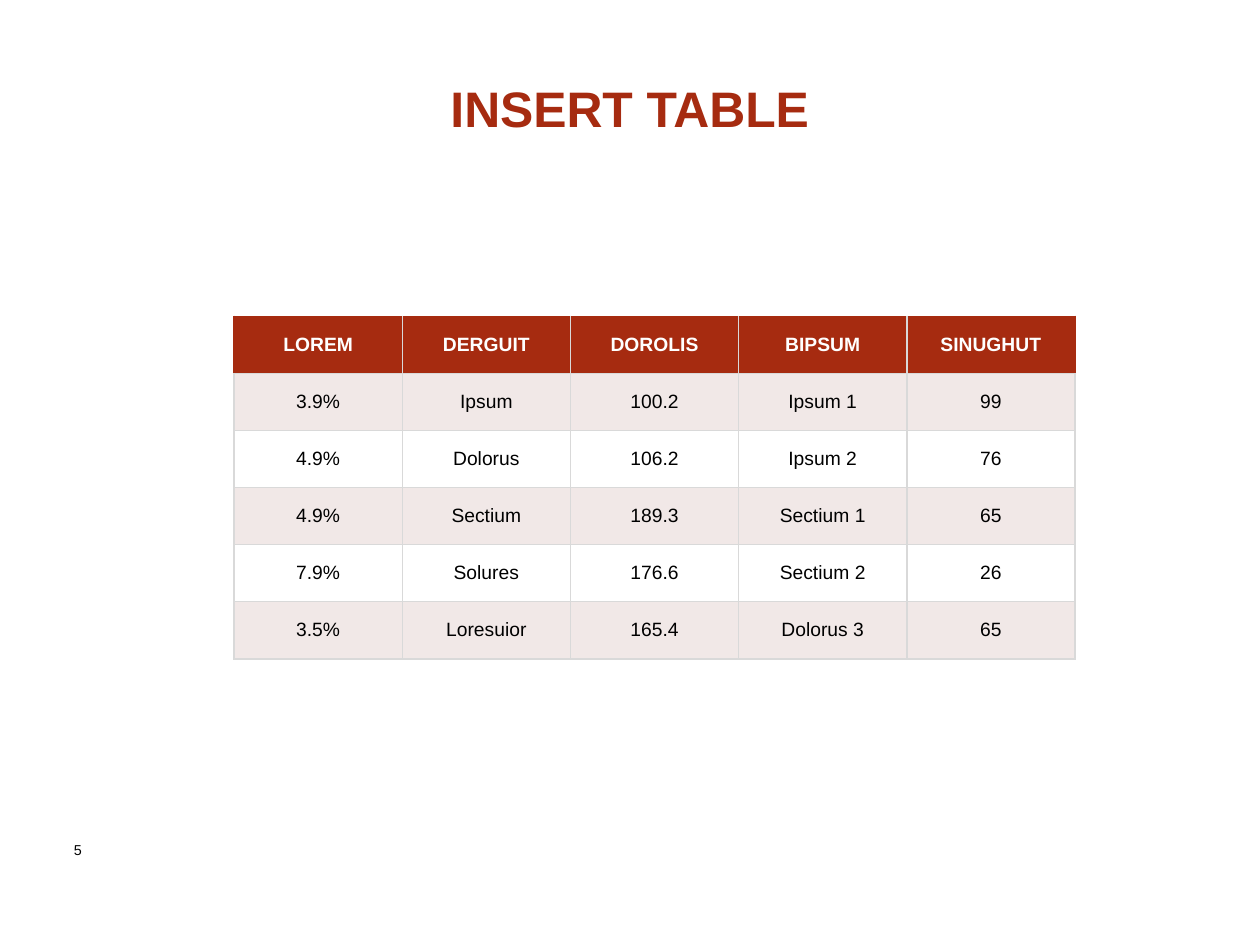
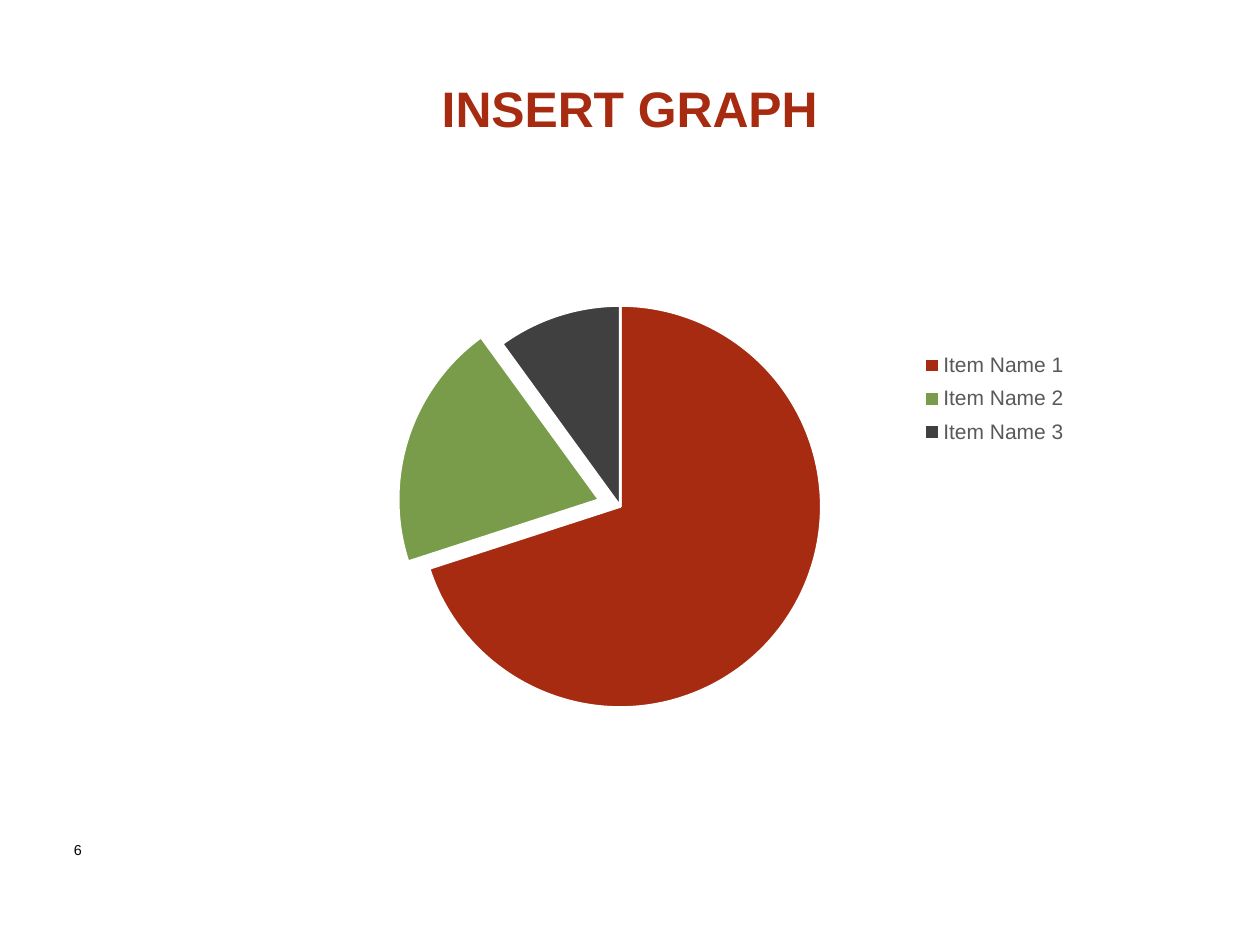
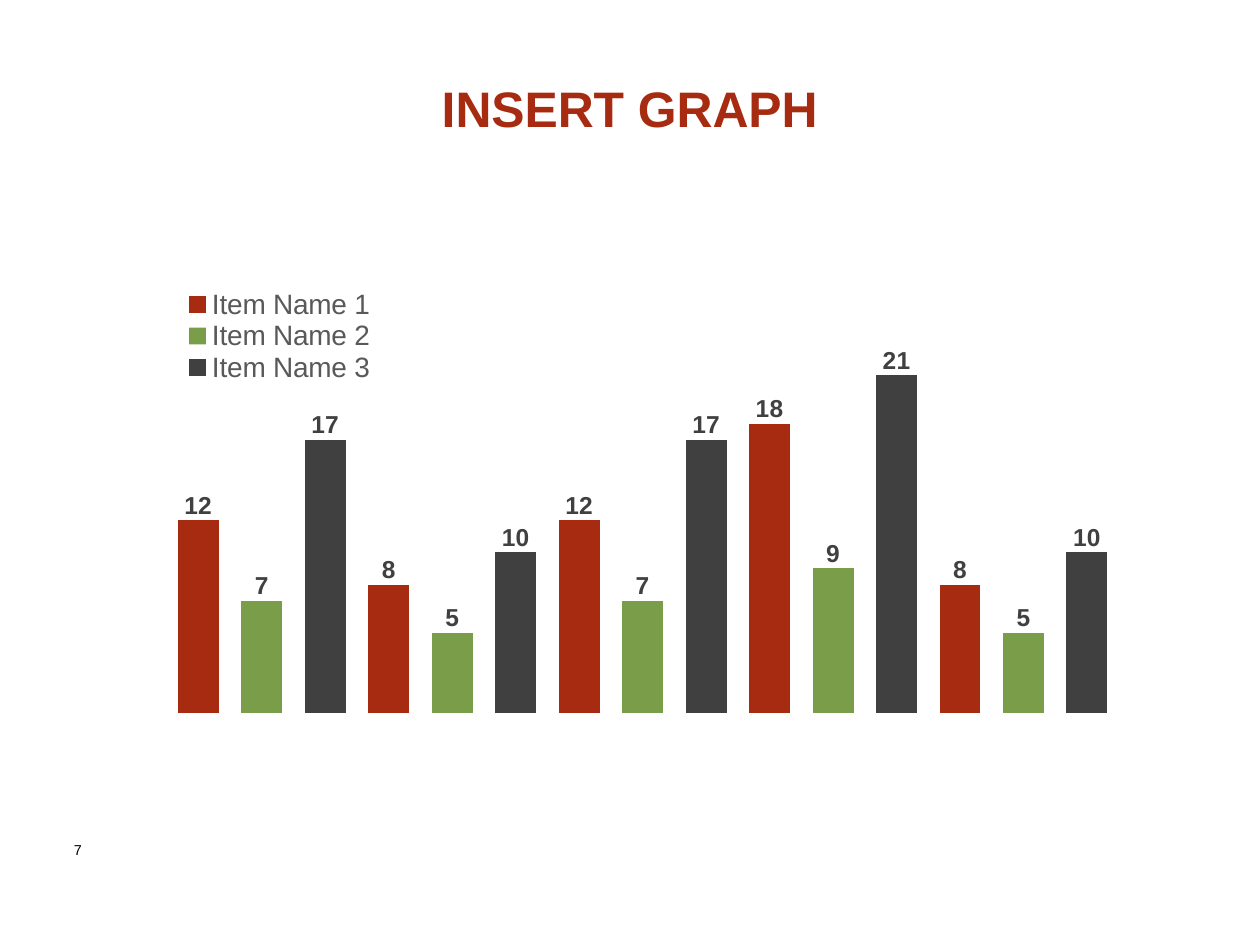
from pptx import Presentation
from pptx.chart.data import CategoryChartData
from pptx.dml.color import RGBColor
from pptx.enum.chart import XL_CHART_TYPE, XL_LABEL_POSITION, XL_LEGEND_POSITION
from pptx.enum.text import MSO_ANCHOR, PP_ALIGN
from pptx.oxml import parse_xml
from pptx.oxml.ns import nsdecls, qn
from pptx.util import Cm, Pt

FONT = "Arial"
RED, GREEN, PIE_GREEN, CHARCOAL = "A62B10", "799D49", "789C49", "404041"
BLACK, WHITE, PALE, GRID = "000000", "FFFFFF", "F1E8E7", "D9D9D9"
LEGEND_GREY, LABEL_GREY = "595959", "404040"
ITEMS = ["Item Name 1", "Item Name 2", "Item Name 3"]
ROWS = [
    ["LOREM", "DERGUIT", "DOROLIS", "BIPSUM", "SINUGHUT"],
    ["3.9%", "Ipsum", "100.2", "Ipsum 1", "99"],
    ["4.9%", "Dolorus", "106.2", "Ipsum 2", "76"],
    ["4.9%", "Sectium", "189.3", "Sectium 1", "65"],
    ["7.9%", "Solures", "176.6", "Sectium 2", "26"],
    ["3.5%", "Loresuior", "165.4", "Dolorus 3", "65"],
]
GROUPS = [(12, 7, 17), (8, 5, 10), (12, 7, 17), (18, 9, 21), (8, 5, 10)]
LABEL_LIFT = -0.07


def rgb(color):
    return RGBColor.from_string(color)


def style_font(font, size, color, bold=False):
    font.name = FONT
    font.size = Pt(size)
    font.bold = bold
    font.color.rgb = rgb(color)


def add_run(p, text, size, color, bold=False):
    r = p.add_run()
    r.text = text
    style_font(r.font, size, color, bold)


def add_text(s, box, text, size, color, bold=False,
             align=PP_ALIGN.LEFT, anchor=MSO_ANCHOR.TOP):
    tf = s.shapes.add_textbox(*map(Cm, box)).text_frame
    tf.word_wrap = True
    tf.vertical_anchor = anchor
    p = tf.paragraphs[0]
    p.alignment = align
    add_run(p, text, size, color, bold)


def add_slide(prs, title, number):
    s = prs.slides.add_slide(prs.slide_layouts[6])
    add_text(s, (1.24, 16.84, 1.1, 1.37), str(number), 8.2, BLACK)
    add_text(s, (4.72, 1.32, 15.95, 1.7), title, 28.5, RED, True,
             PP_ALIGN.CENTER, MSO_ANCHOR.MIDDLE)
    return s


def set_borders(cell, colors):
    tc_pr = cell._tc.get_or_add_tcPr()
    for side, color in zip("LRTB", colors):
        tc_pr.append(parse_xml(
            f'<a:ln{side} {nsdecls("a")} w="12700"><a:solidFill>'
            f'<a:srgbClr val="{color}"/></a:solidFill></a:ln{side}>'))


def style_cell(cell, text, fill, borders, color, bold):
    set_borders(cell, borders)
    cell.fill.solid()
    cell.fill.fore_color.rgb = rgb(fill)
    cell.margin_left = cell.margin_right = Cm(0.15)
    cell.margin_top = cell.margin_bottom = Cm(0.08)
    cell.vertical_anchor = MSO_ANCHOR.MIDDLE
    p = cell.text_frame.paragraphs[0]
    p.alignment = PP_ALIGN.CENTER
    add_run(p, text, 11, color, bold)


def add_grid(s, rows, left, top, col_width, row_height):
    n_cols = len(rows[0])
    table = s.shapes.add_table(
        len(rows), n_cols, Cm(left), Cm(top),
        Cm(col_width * n_cols), Cm(row_height * len(rows))).table
    table.horz_banding = False
    for i, row in enumerate(rows):
        header = i == 0
        fill = RED if header else PALE if i % 2 else WHITE
        for j, text in enumerate(row):
            borders = (RED if header and j == 0 else GRID,
                       RED if header and j == n_cols - 1 else GRID,
                       RED if header else GRID, GRID)
            style_cell(table.cell(i, j), text, fill, borders,
                       WHITE if header else BLACK, header)


def set_layout(parent, index, inner=False, **values):
    for old in parent.findall(qn("c:layout")):
        parent.remove(old)
    parts = '<c:layoutTarget val="inner"/>' if inner else ""
    if "w" in values:
        parts += '<c:xMode val="edge"/><c:yMode val="edge"/>'
    parts += "".join(f'<c:{k} val="{v}"/>' for k, v in values.items())
    parent.insert(index, parse_xml(
        f'<c:layout {nsdecls("c")}><c:manualLayout>{parts}'
        '</c:manualLayout></c:layout>'))


def add_chart(s, kind, data, top, plot_box, legend_box, legend_pos, legend_size):
    chart = s.shapes.add_chart(
        kind, Cm(1.24), Cm(top), Cm(22.53), Cm(9.65), data).chart
    chart.has_title = False
    style_font(chart.font, 10, BLACK)
    chart.has_legend = True
    chart.legend.position = legend_pos
    chart.legend.include_in_layout = False
    style_font(chart.legend.font, legend_size, LEGEND_GREY)
    area = chart._chartSpace.find(".//" + qn("c:plotArea"))
    set_layout(area, 0, True, **dict(zip("xywh", plot_box)))
    set_layout(chart.legend._element, 1, **dict(zip("xywh", legend_box)))
    return chart


def add_pie(s):
    data = CategoryChartData()
    data.categories = ITEMS
    data.add_series("Series 1", (70, 20, 10))
    chart = add_chart(s, XL_CHART_TYPE.PIE, data, 5.87,
                      (0.32, 0.03, 0.36, 0.84), (0.77, 0.11, 0.13, 0.23),
                      XL_LEGEND_POSITION.BOTTOM, 12)
    plot = chart.plots[0]
    plot.vary_by_categories = True
    series = plot.series[0]
    for i, color in enumerate((RED, PIE_GREEN, CHARCOAL)):
        fmt = series.points[i].format
        fmt.fill.solid()
        fmt.fill.fore_color.rgb = rgb(color)
        fmt.line.color.rgb = rgb(WHITE)
        fmt.line.width = Pt(1.5)
    green_slice = series._element.findall(qn("c:dPt"))[1]
    green_slice.find(qn("c:spPr")).addprevious(
        parse_xml(f'<c:explosion {nsdecls("c")} val="11"/>'))


def label_bars(series, filled):
    series.data_labels.show_value = True
    for labels in [series.data_labels] + [series.points[i].data_label for i in filled]:
        style_font(labels.font, 14, LABEL_GREY, True)
        labels.position = XL_LABEL_POSITION.INSIDE_END
    for label in series._element.iter(qn("c:dLbl")):
        set_layout(label, 1, x=0, y=LABEL_LIFT)


def add_columns(s):
    n_items = len(ITEMS)
    n_bars = n_items * len(GROUPS)
    order = list(reversed(range(n_items)))
    data = CategoryChartData()
    data.categories = [str(i + 1) for i in range(n_bars)]
    for item in order:
        data.add_series(ITEMS[item], [
            GROUPS[i // n_items][item] if i % n_items == item else None
            for i in range(n_bars)])
    chart = add_chart(s, XL_CHART_TYPE.COLUMN_STACKED, data, 5.18,
                      (0.094, 0.113, 0.852, 0.841), (0.105, 0.065, 0.18, 0.2),
                      XL_LEGEND_POSITION.RIGHT, 16)
    chart.category_axis.visible = False
    axis = chart.value_axis
    axis.visible = False
    axis.has_major_gridlines = False
    axis.minimum_scale, axis.maximum_scale = 0, 25
    plot = chart.plots[0]
    plot.vary_by_categories = False
    plot.gap_width = 55
    plot.overlap = 100
    for item, series in zip(order, plot.series):
        series.format.fill.solid()
        series.format.fill.fore_color.rgb = rgb((RED, GREEN, CHARCOAL)[item])
        label_bars(series, range(item, n_bars, n_items))


def main():
    prs = Presentation()
    prs.slide_width, prs.slide_height = Cm(25.4), Cm(19.05)
    add_grid(add_slide(prs, "INSERT TABLE", 5), ROWS, 4.72, 6.38, 3.39, 1.15)
    add_pie(add_slide(prs, "INSERT GRAPH", 6))
    add_columns(add_slide(prs, "INSERT GRAPH", 7))
    prs.save("out.pptx")


if __name__ == "__main__":
    main()
